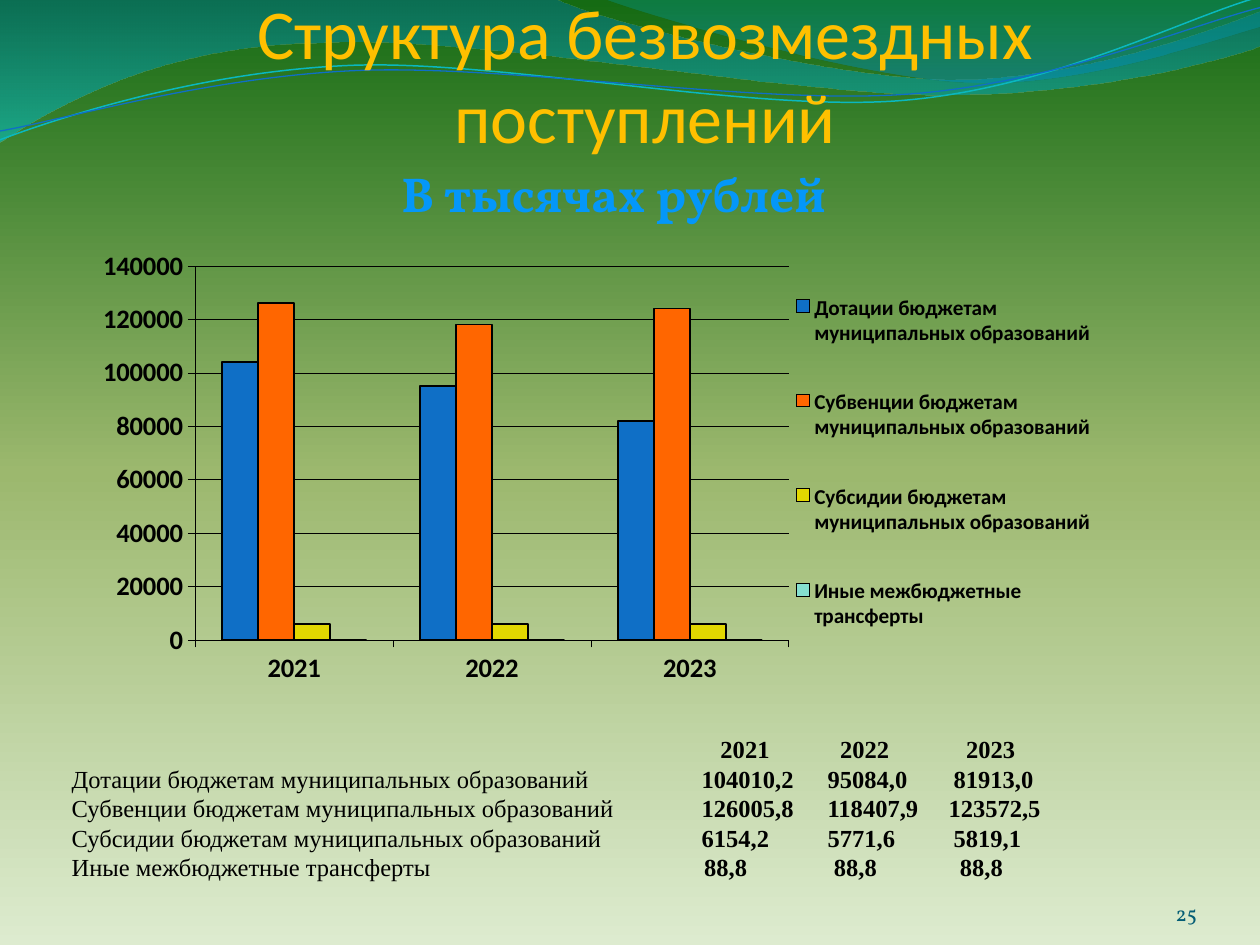
from dataclasses import dataclass
from math import cos, radians, sin
from typing import Any

from pptx import Presentation
from pptx.chart.data import CategoryChartData
from pptx.dml.color import RGBColor
from pptx.enum.chart import XL_CHART_TYPE as ChartKind, XL_LEGEND_POSITION as LegendPosition
from pptx.enum.chart import XL_TICK_LABEL_POSITION as LabelPosition, XL_TICK_MARK as TickMark
from pptx.enum.text import MSO_ANCHOR as Anchor, PP_ALIGN as Align
from pptx.oxml import parse_xml
from pptx.oxml.ns import nsdecls
from pptx.util import Pt

SCALE = 9144
YEARS = ("2021", "2022", "2023")
CHART_BOX = (70, 187, 810, 375)
Point = tuple[float, float]
Box = tuple[int, int, int, int]
Stops = tuple[tuple[int, str, int], ...]


@dataclass(frozen=True)
class Wave:
    box: Box
    start: Point
    curves: tuple[tuple[Point, ...], ...]
    stops: Stops = ()
    color: str = ""
    weight: float = 0
    turn: float = 0


@dataclass(frozen=True)
class Caption:
    text: str
    box: Box
    font: dict[str, Any]
    align: Align
    anchor: Anchor
    insets: Box
    color: str = ""
    stops: Stops = ()


@dataclass(frozen=True)
class Income:
    name: str
    values: tuple[float, float, float]
    color: str
    tabs: tuple[int, int, int]


BACKDROP = ((0, "DDEBCF", 100), (50, "9CB86E", 100), (100, "156B13", 100))
WAVES = (
    Wave((-1, -1, 1002, 114), (0, -1),
         (((440, -1),), ((476, 17), (664, 63), (758, 63)), ((853, 63), (958, 26), (1000, 9)),
          ((1001, 36),), ((983, 44), (870, 76), (746, 75)), ((622, 75), (382, 28), (257, 34)),
          ((129, 35), (46, 83), (-1, 113))),
         stops=((0, "0074A1", 45), (100, "00C6CF", 55))),
    Wave((479, -1, 521, 70), (479, -1),
         (((509, 11), (682, 62), (769, 65)), ((856, 69), (961, 32), (1000, 21)), ((1000, 0),)),
         stops=((0, "00A1A9", 30), (80, "008BBF", 45))),
    Wave((-2, 22, 1002, 71), (0, 111),
         (((48, 93), (158, 57), (277, 52)), ((395, 47), (593, 89), (713, 80)),
          ((833, 71), (938, 15), (998, -2))), color="0AB8BF", weight=0.85, turn=357.3),
    Wave((-2, 30, 1003, 58), (0, 104),
         (((47, 96), (164, 61), (283, 56)), ((403, 51), (597, 83), (717, 75)),
          ((836, 67), (941, 21), (1000, 6))), color="0F6FC6", weight=0.75, turn=357.3),
)
CAPTIONS = (
    Caption("Структура безвозмездных поступлений", (62, 0, 900, 125),
            {"name": "Calibri", "size": Pt(40)}, Align.CENTER, Anchor.BOTTOM,
            (0, 5, 0, 0), color="FFC000"),
    Caption("В тысячах рублей", (281, 125, 412, 57),
            {"name": "Vollkorn", "size": Pt(28), "bold": True}, Align.CENTER, Anchor.TOP,
            (10, 5, 10, 5), stops=((0, "7DC4FF", 100), (75, "0497F9", 100), (100, "0074A1", 100))),
    Caption("25", (867, 695, 83, 40), {"name": "Vollkorn", "size": Pt(12)},
            Align.RIGHT, Anchor.BOTTOM, (0, 0, 0, 0), color="045D75"),
)
INCOMES = (
    Income("Дотации бюджетам муниципальных образований ",
           (104010.2, 95084.0, 81913.0), "0F6FC6", (500, 600, 700)),
    Income("Субвенции бюджетам муниципальных образований ",
           (126005.8, 118407.9, 123572.5), "FF6600", (500, 600, 696)),
    Income("Субсидии бюджетам муниципальных образований ",
           (6154.2, 5771.6, 5819.1), "E2D700", (500, 600, 700)),
    Income("Иные межбюджетные трансферты ", (88.8, 88.8, 88.8), "85DFD0", (502, 605, 705)),
)


def px(length: float) -> int:
    return round(length * SCALE)


def apply(target: Any, values: dict[str, Any]) -> None:
    for name, value in values.items():
        setattr(target, name, value)


def paint(fill: Any, color: str) -> None:
    fill.solid()
    fill.fore_color.rgb = RGBColor.from_string(color)


def paint_gradient(fill: Any, owner: Any, stops: Stops, angle: int) -> None:
    fill.gradient()
    marks = "".join(
        f'<a:gs pos="{position * 1000}"><a:srgbClr val="{color}">'
        f'<a:alpha val="{opacity * 1000}"/></a:srgbClr></a:gs>'
        for position, color, opacity in stops)
    gradient = owner.xpath(".//a:gradFill")[0]
    for child in list(gradient):
        gradient.remove(child)
    gradient.append(parse_xml(f'<a:gsLst {nsdecls("a")}>{marks}</a:gsLst>'))
    gradient.append(parse_xml(f'<a:lin {nsdecls("a")} ang="{angle * 60000}" scaled="0"/>'))


def outline(wave: Wave) -> Any:
    left, top, width, height = wave.box
    angle = radians(-wave.turn)

    def mark(point: Point) -> str:
        x, y = point[0] - left - width / 2, point[1] - top - height / 2
        across = x * cos(angle) - y * sin(angle) + width / 2
        down = x * sin(angle) + y * cos(angle) + height / 2
        return f'<a:pt x="{px(across)}" y="{px(down)}"/>'

    parts = [f"<a:moveTo>{mark(wave.start)}</a:moveTo>"]
    for curve in wave.curves:
        tag = "cubicBezTo" if len(curve) == 3 else "lnTo"
        parts.append(f"<a:{tag}>{''.join(map(mark, curve))}</a:{tag}>")
    parts.append("<a:close/>" if wave.stops else "")
    return parse_xml(f'<a:path {nsdecls("a")} w="{px(width)}" h="{px(height)}">'
                     f'{"".join(parts)}</a:path>')


def draw_wave(page: Any, wave: Wave) -> None:
    builder = page.shapes.build_freeform(*wave.start, scale=SCALE)
    builder.add_line_segments([curve[-1] for curve in wave.curves], close=False)
    shape = builder.convert_to_shape()
    apply(shape, dict(zip(("left", "top", "width", "height"), map(px, wave.box))))
    shape.rotation = wave.turn
    old = shape.element.xpath(".//a:path")[0]
    old.getparent().replace(old, outline(wave))
    shape.shadow.inherit = False
    if wave.stops:
        paint_gradient(shape.fill, shape.element, wave.stops, 90)
        shape.line.fill.background()
    else:
        shape.fill.background()
        style_line(shape.line, wave.weight, wave.color)


def style_line(line: Any, weight: float, color: str = "000000") -> None:
    paint(line.fill, color)
    line.width = Pt(weight)


def draw_caption(page: Any, caption: Caption) -> None:
    frame = page.shapes.add_textbox(*map(px, caption.box)).text_frame
    sides = ("margin_left", "margin_top", "margin_right", "margin_bottom")
    apply(frame, {"word_wrap": True, "vertical_anchor": caption.anchor,
                  **dict(zip(sides, map(px, caption.insets)))})
    para = frame.paragraphs[0]
    para.alignment = caption.align
    span = para.add_run()
    span.text = caption.text
    apply(span.font, caption.font)
    if caption.stops:
        paint_gradient(span.font.fill, span._r, caption.stops, 90)
    else:
        paint(span.font.fill, caption.color)


def place(part: Any, index: int, target: str, box: Box) -> None:
    for old in part.xpath("c:layout"):
        part.remove(old)
    values = [length / CHART_BOX[2 + order % 2] for order, length in enumerate(box)]
    sizes = "".join(f'<c:{name} val="{value}"/>' for name, value in zip("xywh", values))
    part.insert(index, parse_xml(
        f'<c:layout {nsdecls("c")}><c:manualLayout>{target}<c:xMode val="edge"/>'
        f'<c:yMode val="edge"/>{sizes}</c:manualLayout></c:layout>'))


def style_font(font: Any, size: float, name: str = "Calibri", bold: bool = True) -> None:
    apply(font, {"name": name, "size": Pt(size), "bold": bold})
    paint(font.fill, "000000")


def draw_chart(page: Any) -> None:
    data = CategoryChartData(number_format="General")
    data.categories = YEARS
    for income in INCOMES:
        data.add_series(income.name, [int(round(value, -3)) for value in income.values])
    chart = page.shapes.add_chart(ChartKind.COLUMN_CLUSTERED, *map(px, CHART_BOX), data).chart
    apply(chart, {"has_title": False, "has_legend": True})
    style_font(chart.font, 15.2)
    apply(chart.legend, {"position": LegendPosition.RIGHT, "include_in_layout": False})
    style_font(chart.legend.font, 12.1)
    apply(chart.plots[0], {"gap_width": 150, "overlap": 0, "vary_by_categories": False})
    for series, income in zip(chart.plots[0].series, INCOMES):
        paint(series.format.fill, income.color)
        style_line(series.format.line, 1)
    for axis in (chart.category_axis, chart.value_axis):
        axis.major_tick_mark = TickMark.OUTSIDE
        style_font(axis.tick_labels.font, 15.2)
        style_line(axis.format.line, 0.25)
    chart.category_axis.tick_label_position = LabelPosition.LOW
    style_line(chart.value_axis.major_gridlines.format.line, 0.25)
    root = chart.element
    place(root.xpath(".//c:plotArea")[0], 0, '<c:layoutTarget val="inner"/>', (85, 24, 471, 297))
    place(root.xpath(".//c:legend")[0], 1, "", (555, 12, 251, 336))


def write_row(para: Any, label: str, values: tuple[str, ...], tabs: tuple[int, ...]) -> None:
    marks = "".join(f'<a:tab pos="{px(tab)}" algn="l"/>' for tab in tabs)
    para._p.get_or_add_pPr().append(parse_xml(f'<a:tabLst {nsdecls("a")}>{marks}</a:tabLst>'))
    for text, bold in ((f"{label}\t", False), ("\t".join(values), True)):
        span = para.add_run()
        span.text = text
        style_font(span.font, 14, "Times New Roman", bold)


def draw_figures(page: Any) -> None:
    frame = page.shapes.add_textbox(*map(px, (47, 578, 906, 128))).text_frame
    frame.word_wrap = True
    write_row(frame.paragraphs[0], "", YEARS, (515, 610, 710))
    for income in INCOMES:
        figures = tuple(f"{value:.1f}".replace(".", ",") for value in income.values)
        write_row(frame.add_paragraph(), income.name, figures, income.tabs)


def main() -> None:
    """Build the slide on the structure of grants and save it."""
    deck = Presentation()
    apply(deck, {"slide_width": px(1000), "slide_height": px(750)})
    page = deck.slides.add_slide(deck.slide_layouts[6])
    paint_gradient(page.background.fill, page.element, BACKDROP, 270)
    for draw, items in ((draw_wave, WAVES), (draw_caption, CAPTIONS)):
        for item in items:
            draw(page, item)
    draw_chart(page)
    draw_figures(page)
    deck.save("out.pptx")


if __name__ == "__main__":
    main()
